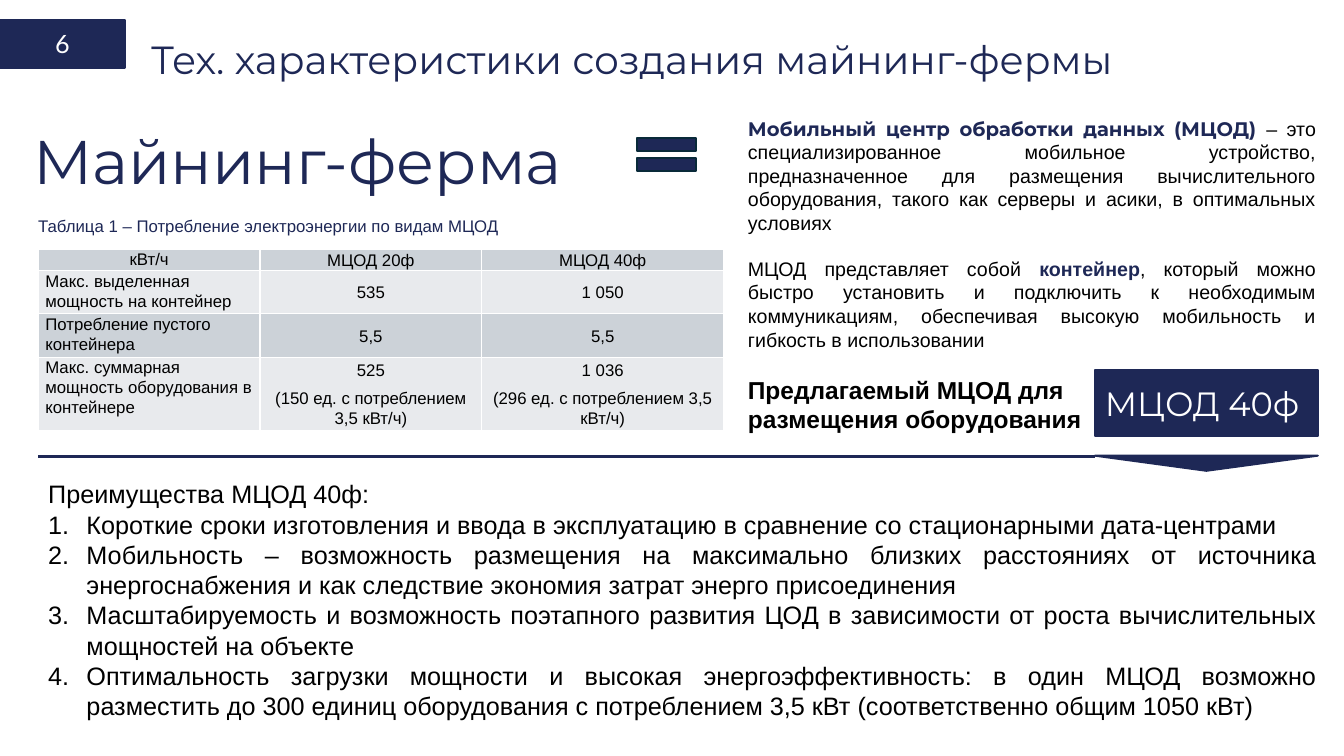
"""Builds the slide on the technical characteristics of a mining farm."""
from dataclasses import dataclass, replace

from lxml.etree import SubElement
from pptx import Presentation
from pptx.dml.color import RGBColor
from pptx.enum.shapes import MSO_CONNECTOR, MSO_SHAPE
from pptx.enum.text import MSO_ANCHOR, MSO_AUTO_SIZE, PP_ALIGN
from pptx.oxml import parse_xml
from pptx.oxml.ns import nsdecls, qn
from pptx.util import Inches, Pt

NAVY = RGBColor(0x1E, 0x28, 0x56)
TEAL = RGBColor(0x09, 0x2A, 0x39)
BLACK = RGBColor(0, 0, 0)
WHITE = RGBColor(255, 255, 255)
DARK_BAND = RGBColor(0xCC, 0xD2, 0xD8)
LIGHT_BAND = RGBColor(0xE8, 0xEA, 0xED)

SLIDE_WIDTH, SLIDE_HEIGHT = Inches(13.33), Inches(7.5)
MARGIN, RIGHT_COLUMN, BADGE_LEFT, BADGE_WIDTH = 2.85, 54.91, 81.47, 16.58
BADGE_TOP = 48.93


@dataclass(frozen=True)
class Box:
    """A place on the slide, in percent of its width and height."""
    left: float
    top: float
    width: float
    height: float

    def lengths(self) -> tuple[int, int, int, int]:
        """Returns left, top, width and height as slide lengths."""
        return (across(self.left), down(self.top), across(self.width), down(self.height))


@dataclass(frozen=True)
class Style:
    """The look of a paragraph and its runs."""
    size: float
    font: str = "Arial"
    color: RGBColor = BLACK
    bold: bool = False
    align: PP_ALIGN = PP_ALIGN.LEFT
    line_spacing: float = 1.0
    before: float = 0
    after: float = 0


@dataclass(frozen=True)
class Label:
    """A text box with one style."""
    box: Box
    text: str
    style: Style


@dataclass(frozen=True)
class Figure:
    """A filled preset shape."""
    kind: MSO_SHAPE
    box: Box
    outline: RGBColor = NAVY
    rotation: float = 0
    text: str = ""
    style: Style = Style(18)


HEADING = Style(28, "Montserrat", NAVY, align=PP_ALIGN.JUSTIFY, line_spacing=1.5, after=8)
BODY = Style(14, align=PP_ALIGN.JUSTIFY)
KEYWORD = replace(BODY, color=NAVY, bold=True)
ADVANTAGE = Style(18, align=PP_ALIGN.JUSTIFY)
CELL = Style(12, line_spacing=1.07, before=3, after=3)

TITLE = Label(Box(10.5, 0.93, 87.5, 9.73), "Тех. характеристики создания майнинг-фермы", HEADING)
FIGURES = [
    Figure(MSO_SHAPE.RECTANGLE, Box(0, 2.67, 9.3, 6.27), text="6",
           style=Style(18, "Lato", WHITE, align=PP_ALIGN.CENTER)),
    Figure(MSO_SHAPE.MATH_EQUAL, Box(46.59, 16.8, 6, 7.33), TEAL),
    Figure(MSO_SHAPE.RECTANGLE, Box(BADGE_LEFT, BADGE_TOP, BADGE_WIDTH, 8.8),
           text="МЦОД 40ф", style=Style(24, "Montserrat", WHITE)),
    Figure(MSO_SHAPE.ISOSCELES_TRIANGLE, Box(BADGE_LEFT, 60.27, BADGE_WIDTH, 2), rotation=180),
]
LABELS = [
    Label(Box(1.73, 10.67, 50.04, 14.53), "Майнинг-ферма", replace(HEADING, size=44)),
    Label(Box(2.1, 27.87, 53.79, 4), "Таблица 1 – Потребление электроэнергии по видам МЦОД",
          Style(12, color=NAVY)),
    Label(Box(RIGHT_COLUMN, BADGE_TOP, 34.13, 9.47),
          "Предлагаемый МЦОД для размещения оборудования", Style(17.5, bold=True)),
]
DEFINITION_BOX = Box(RIGHT_COLUMN, 14.8, 43.74, 32.8)
DEFINITION = [
    [("Мобильный центр обработки данных (МЦОД) ", replace(KEYWORD, font="Montserrat")),
     ("– это специализированное мобильное устройство, предназначенное для размещения "
      "вычислительного оборудования, такого как серверы и асики, в оптимальных условиях", BODY)],
    [("МЦОД представляет собой ", replace(BODY, before=16)),
     ("контейнер", KEYWORD),
     (", который можно быстро установить и подключить к необходимым коммуникациям, "
      "обеспечивая высокую мобильность и гибкость в использовании", BODY)],
]
TABLE_BOX = Box(MARGIN, 32.93, 51, 24)
COLUMN_WIDTHS = [16.5, 16.5, 18]
ROW_HEIGHTS = [2.8, 5.73, 5.73, 9.74]
CONSUMPTION = [
    ["кВт/ч", "МЦОД 20ф", "МЦОД 40ф"],
    ["Макс. выделенная мощность на контейнер", "535", "1 050"],
    ["Потребление пустого контейнера", "5,5", "5,5"],
    ["Макс. суммарная мощность оборудования в контейнере",
     "525\n(150 ед. с потреблением 3,5 кВт/ч)", "1 036\n(296 ед. с потреблением 3,5 кВт/ч)"],
]
ADVANTAGES_BOX = Box(MARGIN, 62.67, 95.87, 33.6)
ADVANTAGES = [
    "Преимущества МЦОД 40ф:",
    "Короткие сроки изготовления и ввода в эксплуатацию в сравнение со стационарными "
    "дата-центрами",
    "Мобильность – возможность размещения на максимально близких расстояниях от источника "
    "энергоснабжения и как следствие экономия затрат энерго присоединения",
    "Масштабируемость и возможность поэтапного развития ЦОД в зависимости от роста "
    "вычислительных мощностей на объекте",
    "Оптимальность загрузки мощности и высокая энергоэффективность: в один МЦОД возможно "
    "разместить до 300 единиц оборудования с потреблением 3,5 кВт (соответственно общим 1050 кВт)",
]


def across(percent: float) -> int:
    """Turns a share of the slide's width into a length."""
    return round(SLIDE_WIDTH * percent / 100)


def down(percent: float) -> int:
    """Turns a share of the slide's height into a length."""
    return round(SLIDE_HEIGHT * percent / 100)


def format_run(run, style: Style) -> None:
    """Applies the font of a style to a run."""
    run.font.name, run.font.size, run.font.bold = style.font, Pt(style.size), style.bold
    run.font.color.rgb = style.color


def format_paragraph(paragraph, style: Style) -> None:
    """Applies a style to a paragraph and all its runs."""
    paragraph.alignment, paragraph.line_spacing = style.align, style.line_spacing
    paragraph.space_before, paragraph.space_after = Pt(style.before), Pt(style.after)
    for run in paragraph.runs:
        format_run(run, style)


def write(text_frame, text: str, style: Style) -> None:
    """Fills a text frame with paragraphs of one style."""
    text_frame.text = text
    text_frame.word_wrap = True
    for paragraph in text_frame.paragraphs:
        format_paragraph(paragraph, style)


def add_title(slide, label: Label) -> None:
    """Moves and formats the title placeholder."""
    title = slide.shapes.title
    title.left, title.top, title.width, title.height = label.box.lengths()
    write(title.text_frame, label.text, label.style)
    title.text_frame.auto_size = MSO_AUTO_SIZE.NONE
    title.text_frame.vertical_anchor = MSO_ANCHOR.TOP


def add_label(slide, label: Label):
    """Adds a text box and returns its text frame."""
    text_frame = slide.shapes.add_textbox(*label.box.lengths()).text_frame
    write(text_frame, label.text, label.style)
    return text_frame


def add_figure(slide, figure: Figure) -> None:
    """Adds a filled shape with its text."""
    shape = slide.shapes.add_shape(figure.kind, *figure.box.lengths())
    shape.shadow.inherit = False
    shape.rotation = figure.rotation
    shape.fill.solid()
    shape.fill.fore_color.rgb = NAVY
    shape.line.color.rgb, shape.line.width = figure.outline, Pt(1.5)
    if figure.text:
        write(shape.text_frame, figure.text, figure.style)
        shape.text_frame.vertical_anchor = MSO_ANCHOR.MIDDLE


def add_definition(slide) -> None:
    """Adds the two paragraphs with highlighted terms."""
    text_frame = add_label(slide, Label(DEFINITION_BOX, "\n" * (len(DEFINITION) - 1), BODY))
    for paragraph, parts in zip(text_frame.paragraphs, DEFINITION):
        format_paragraph(paragraph, parts[0][1])
        for words, style in parts:
            run = paragraph.add_run()
            run.text = words
            format_run(run, style)


def add_border(cell) -> None:
    """Gives a cell thin white borders."""
    for position, side in enumerate("LRTB"):
        cell._tc.get_or_add_tcPr().insert(position, parse_xml(
            f'<a:ln{side} {nsdecls("a")} w="{Pt(1)}"><a:solidFill>'
            f'<a:srgbClr val="{WHITE}"/></a:solidFill></a:ln{side}>'))


def add_consumption_table(slide) -> None:
    """Adds the table of power consumption."""
    table = slide.shapes.add_table(
        len(ROW_HEIGHTS), len(COLUMN_WIDTHS), *TABLE_BOX.lengths()).table
    table.first_row = table.horz_banding = False
    for column, width in zip(table.columns, COLUMN_WIDTHS):
        column.width = across(width)
    for row_index, (row, height) in enumerate(zip(table.rows, ROW_HEIGHTS)):
        row.height = down(height)
        for column_index, cell in enumerate(row.cells):
            is_row_name = row_index > 0 and column_index == 0
            align = PP_ALIGN.LEFT if is_row_name else PP_ALIGN.CENTER
            write(cell.text_frame, CONSUMPTION[row_index][column_index], replace(CELL, align=align))
            cell.vertical_anchor = MSO_ANCHOR.MIDDLE if column_index else MSO_ANCHOR.TOP
            cell.margin_left = cell.margin_right = Inches(0.07)
            cell.margin_top = cell.margin_bottom = 0
            cell.fill.solid()
            cell.fill.fore_color.rgb = LIGHT_BAND if row_index % 2 else DARK_BAND
            add_border(cell)


def add_divider(slide) -> None:
    """Adds the line that leads to the triangle."""
    height = down(60.4)
    line = slide.shapes.add_connector(
        MSO_CONNECTOR.STRAIGHT, across(MARGIN), height, across(BADGE_LEFT), height)
    line.line.color.rgb, line.line.width = NAVY, Pt(2)
    SubElement(line._element.spPr, qn("a:effectLst"))


def add_advantages(slide) -> None:
    """Adds the numbered list under its heading."""
    text_frame = add_label(slide, Label(ADVANTAGES_BOX, "\n".join(ADVANTAGES), ADVANTAGE))
    for paragraph in text_frame.paragraphs[1:]:
        properties = paragraph._p.get_or_add_pPr()
        properties.set("marL", str(Inches(0.38)))
        properties.set("indent", str(-Inches(0.38)))
        SubElement(properties, qn("a:buAutoNum"), type="arabicPeriod")


def main() -> None:
    """Builds and saves the presentation."""
    presentation = Presentation()
    presentation.slide_width, presentation.slide_height = SLIDE_WIDTH, SLIDE_HEIGHT
    slide = presentation.slides.add_slide(presentation.slide_layouts[5])
    add_title(slide, TITLE)
    for figure in FIGURES:
        add_figure(slide, figure)
    for label in LABELS:
        add_label(slide, label)
    add_definition(slide)
    add_consumption_table(slide)
    add_divider(slide)
    add_advantages(slide)
    presentation.save("out.pptx")


if __name__ == "__main__":
    main()
